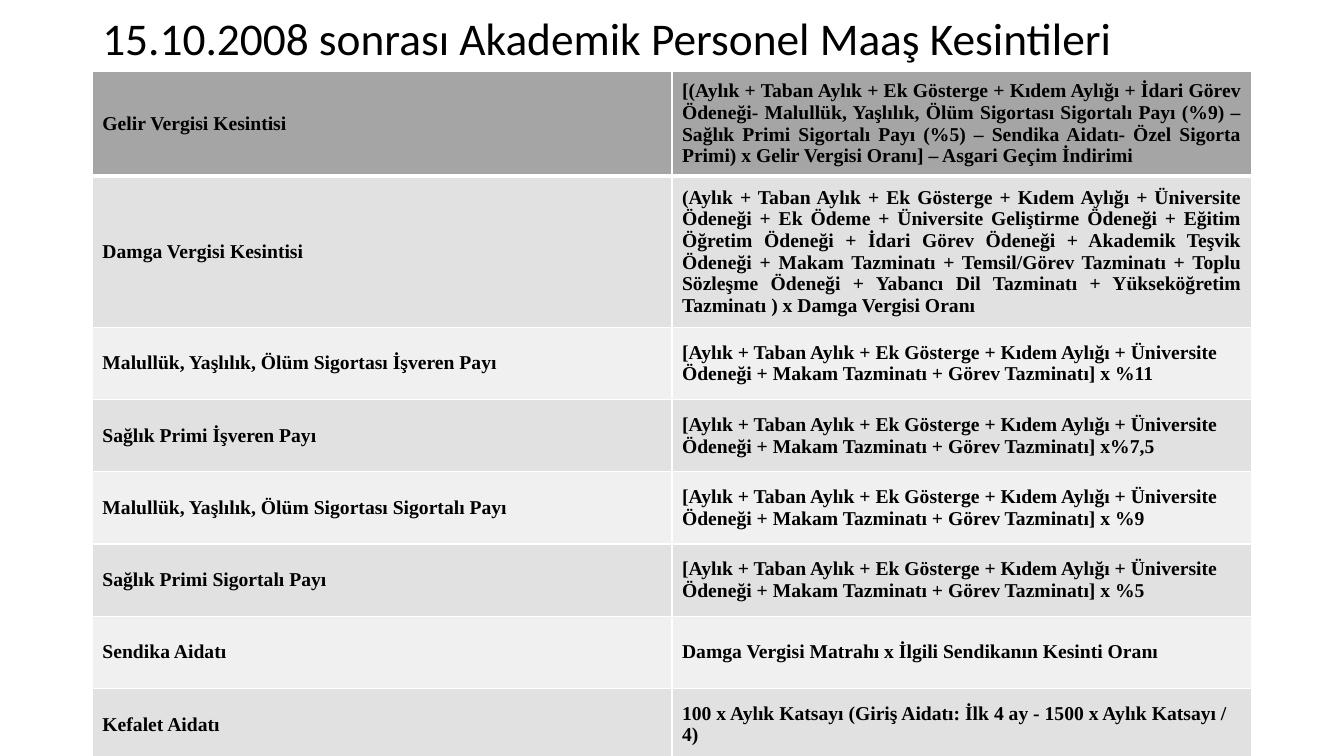
from lxml import etree
from pptx import Presentation
from pptx import util as u
from pptx.dml.color import RGBColor
from pptx.enum import text
from pptx.oxml import ns

BLACK = RGBColor(0, 0, 0)
WHITE = RGBColor(255, 255, 255)
HEADER = RGBColor(0xA5, 0xA5, 0xA5)
BANDS = [RGBColor(0xF0, 0xF0, 0xF0), RGBColor(0xE1, 0xE1, 0xE1)]

BASE = "[Aylık + Taban Aylık + Ek Gösterge + Kıdem Aylığı + Üniversite Ödeneği + Makam Tazminatı + Görev Tazminatı] x"
DEDUCTIONS = [
    ("Gelir Vergisi Kesintisi",
     "[(Aylık + Taban Aylık + Ek Gösterge + Kıdem Aylığı + İdari Görev Ödeneği- "
     "Malullük, Yaşlılık, Ölüm Sigortası Sigortalı Payı (%9) – Sağlık Primi Sigortalı Payı (%5) – "
     "Sendika Aidatı- Özel Sigorta Primi) x Gelir Vergisi Oranı] – Asgari Geçim İndirimi"),
    ("Damga Vergisi Kesintisi",
     "(Aylık + Taban Aylık + Ek Gösterge + Kıdem Aylığı + Üniversite Ödeneği + Ek Ödeme + "
     "Üniversite Geliştirme Ödeneği + Eğitim Öğretim Ödeneği + İdari Görev Ödeneği + "
     "Akademik Teşvik Ödeneği + Makam Tazminatı + Temsil/Görev Tazminatı + "
     "Toplu Sözleşme Ödeneği + Yabancı Dil Tazminatı + Yükseköğretim Tazminatı ) x Damga Vergisi Oranı"),
    ("Malullük, Yaşlılık, Ölüm Sigortası İşveren Payı", BASE + " %11"),
    ("Sağlık Primi İşveren Payı", BASE + "%7,5"),
    ("Malullük, Yaşlılık, Ölüm Sigortası Sigortalı Payı", BASE + " %9"),
    ("Sağlık Primi Sigortalı Payı", BASE + " %5"),
    ("Sendika Aidatı", "Damga Vergisi Matrahı x İlgili Sendikanın Kesinti Oranı"),
    ("Kefalet Aidatı", "100 x Aylık Katsayı (Giriş Aidatı: İlk 4 ay - 1500 x Aylık Katsayı / 4)"),
]
ROW_HEIGHTS = [72.6, 105.6] + [51.6] * 6
JUSTIFIED_ROWS = 2


class Deck:
    title_font = "Calibri"
    table_font = "Times New Roman"

    def __init__(self, width, height):
        self.prs = Presentation()
        self.prs.slide_width, self.prs.slide_height = u.Pt(width), u.Pt(height)
        self.s = self.prs.slides.add_slide(self.prs.slide_layouts[6])

    def style(self, p, name, size, bold=False):
        p.font.name, p.font.size, p.font.bold = name, u.Pt(size), bold
        p.font.color.rgb = BLACK

    def title(self, words, x, y, w, h):
        tf = self.s.shapes.add_textbox(u.Pt(x), u.Pt(y), u.Pt(w), u.Pt(h)).text_frame
        tf.word_wrap = True
        tf.vertical_anchor = text.MSO_ANCHOR.MIDDLE
        p = tf.paragraphs[0]
        p.text = words
        p.line_spacing = 0.9
        self.style(p, self.title_font, 32.4)

    def border(self, cell, side, width):
        tc_pr = cell._tc.get_or_add_tcPr()
        ln = etree.SubElement(tc_pr, ns.qn(f"a:ln{side}"), w=str(u.Pt(width)))
        fill = etree.SubElement(ln, ns.qn("a:solidFill"))
        etree.SubElement(fill, ns.qn("a:srgbClr"), val=str(WHITE))

    def cell(self, cell, words, row):
        for side in "LRTB":
            thick = (row, side) in [(0, "B"), (1, "T")]
            self.border(cell, side, 3 if thick else 1)
        cell.fill.solid()
        cell.fill.fore_color.rgb = BANDS[row % 2] if row else HEADER
        cell.vertical_anchor = text.MSO_ANCHOR.MIDDLE
        p = cell.text_frame.paragraphs[0]
        p.text = words
        justified = row < JUSTIFIED_ROWS
        p.alignment = text.PP_ALIGN.JUSTIFY if justified else text.PP_ALIGN.LEFT
        self.style(p, self.table_font, 14, True)

    def table(self, rows, heights, x, y, w):
        table = self.s.shapes.add_table(
            len(rows), len(rows[0]), u.Pt(x), u.Pt(y), u.Pt(w), u.Pt(sum(heights))).table
        for i, (words, height) in enumerate(zip(rows, heights)):
            table.rows[i].height = u.Pt(height)
            for j, entry in enumerate(words):
                self.cell(table.cell(i, j), entry, i)


def main():
    deck = Deck(960, 540)
    deck.title("15.10.2008 sonrası Akademik Personel Maaş Kesintileri", 66, 8, 828, 43)
    deck.table(DEDUCTIONS, ROW_HEIGHTS, 66, 51.2, 828)
    deck.prs.save("out.pptx")


if __name__ == "__main__":
    main()
